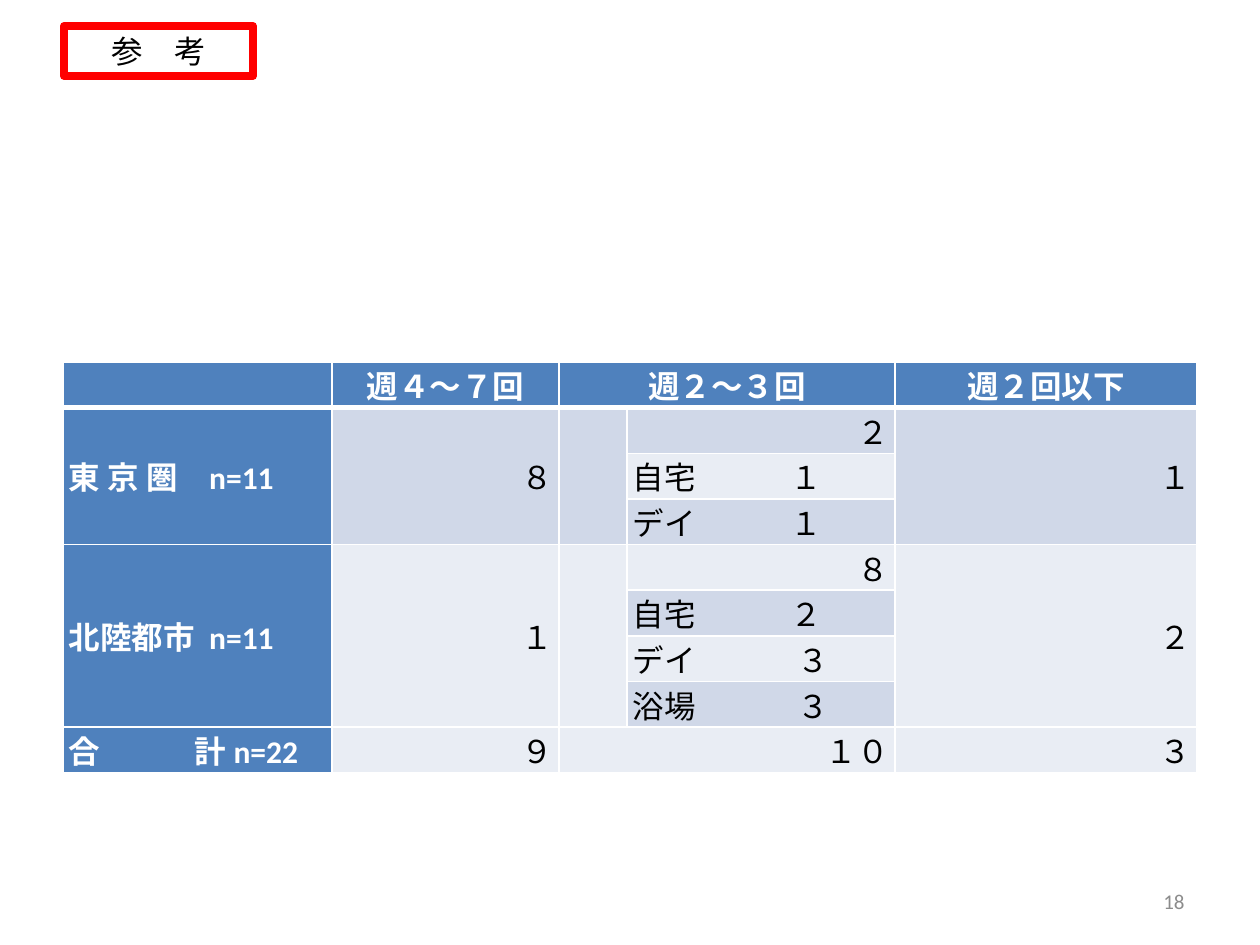
from dataclasses import dataclass

from lxml.etree import SubElement
from pptx import Presentation
from pptx.dml.color import RGBColor
from pptx.enum.lang import MSO_LANGUAGE_ID
from pptx.enum.shapes import MSO_SHAPE
from pptx.enum.text import MSO_ANCHOR, MSO_AUTO_SIZE, PP_ALIGN
from pptx.oxml.ns import qn
from pptx.util import Inches, Pt

PX = Inches(1) // 126


@dataclass(frozen=True)
class Theme:
    latin: str = "Calibri"
    japanese: str = "Noto Sans CJK JP"
    body: int = 18
    small: int = 12
    black: str = "000000"
    white: str = "FFFFFF"
    gray: str = "8C8C8C"
    red: str = "FF0000"
    header: str = "4F81BD"
    bands: tuple = ("E9EDF4", "D0D8E8")
    rule: int = 1
    header_rule: int = 3
    frame: float = 4.5


class SlideBuilder:
    def __init__(self, slide, theme):
        self.slide = slide
        self.theme = theme

    def text(self, text_frame, text, align, color, size=None, bold=False, latin=None):
        paragraph = text_frame.paragraphs[0]
        paragraph.alignment = align
        run = paragraph.add_run()
        run.text = text
        font = run.font
        font.size = Pt(size or self.theme.body)
        font.bold = bold
        font.color.rgb = RGBColor.from_string(color)
        font.name = latin or self.theme.latin
        font.language_id = MSO_LANGUAGE_ID.JAPANESE
        SubElement(run._r.get_or_add_rPr(), qn("a:ea"), typeface=self.theme.japanese)

    def label(self, text, left, top, width, height):
        frame = self.slide.shapes.add_shape(
            MSO_SHAPE.RECTANGLE, left * PX, top * PX, width * PX, height * PX)
        frame.shadow.inherit = False
        frame.fill.background()
        frame.line.color.rgb = RGBColor.from_string(self.theme.red)
        frame.line.width = Pt(self.theme.frame)
        frame.text_frame.vertical_anchor = MSO_ANCHOR.TOP
        frame.text_frame.word_wrap = True
        frame.text_frame.auto_size = MSO_AUTO_SIZE.SHAPE_TO_FIT_TEXT
        self.text(frame.text_frame, text, PP_ALIGN.CENTER, self.theme.black,
                  latin=self.theme.japanese)

    def page_number(self, text, left, top, width, height):
        box = self.slide.shapes.add_textbox(left * PX, top * PX, width * PX, height * PX)
        box.text_frame.word_wrap = True
        box.text_frame.vertical_anchor = MSO_ANCHOR.MIDDLE
        self.text(box.text_frame, text, PP_ALIGN.RIGHT, self.theme.gray, self.theme.small)

    def border(self, cell, row):
        properties = cell._tc.get_or_add_tcPr()
        thick_side = {0: "lnB", 1: "lnT"}.get(row)
        for side in ("lnL", "lnR", "lnT", "lnB"):
            width = self.theme.header_rule if side == thick_side else self.theme.rule
            line = SubElement(properties, qn(f"a:{side}"), w=str(Pt(width)))
            fill = SubElement(line, qn("a:solidFill"))
            SubElement(fill, qn("a:srgbClr"), val=self.theme.white)

    def table(self, rows, spans, left, top, height, column_widths, row_height):
        frame = self.slide.shapes.add_table(
            len(rows), len(column_widths), left * PX, top * PX,
            sum(column_widths) * PX, height * PX)
        table = frame.table
        for column, width in zip(table.columns, column_widths):
            column.width = width * PX
        for row in table.rows:
            row.height = row_height * PX
        frame.height = height * PX
        for r, texts in enumerate(rows):
            for c, text in enumerate(texts):
                self.cell(table.cell(r, c), r, c, text)
        for r, c, height_span, width_span in spans:
            table.cell(r, c).merge(table.cell(r + height_span - 1, c + width_span - 1))

    def cell(self, cell, row, column, text):
        theme = self.theme
        heading = row == 0 or column == 0
        cell.margin_left = cell.margin_right = 6 * PX
        cell.margin_top = cell.margin_bottom = 0
        cell.vertical_anchor = MSO_ANCHOR.MIDDLE
        self.border(cell, row)
        cell.fill.solid()
        cell.fill.fore_color.rgb = RGBColor.from_string(
            theme.header if heading else theme.bands[row % 2])
        if not text:
            return
        if row == 0:
            align = PP_ALIGN.CENTER
        elif column == 0 or "　" in text:
            align = PP_ALIGN.LEFT
        else:
            align = PP_ALIGN.RIGHT
        self.text(cell.text_frame, text, align,
                  theme.white if heading else theme.black, bold=heading)


VISITS = [
    ["", "週４～７回", "週２～３回", "", "週２回以下"],
    ["東 京 圏　n=11", "８", "", "２", "１"],
    ["", "", "", "自宅　　　１", ""],
    ["", "", "", "デイ　　　１", ""],
    ["北陸都市  n=11", "１", "", "８", "２"],
    ["", "", "", "自宅　　　２", ""],
    ["", "", "", "デイ　　　 ３", ""],
    ["", "", "", "浴場　　　 ３", ""],
    ["合　　　計 n=22", "９", "１０", "", "３"],
]
REGIONS = [(1, 3), (4, 4)]


def main():
    presentation = Presentation()
    presentation.slide_width = 1260 * PX
    presentation.slide_height = 945 * PX
    slide = presentation.slides.add_slide(presentation.slide_layouts[6])
    builder = SlideBuilder(slide, Theme())
    spans = [(row, 2, 1, 2) for row in (0, len(VISITS) - 1)]
    spans += [(row, column, count, 1) for row, count in REGIONS for column in (0, 1, 2, 4)]
    builder.table(VISITS, spans, left=63, top=362, height=340,
                  column_widths=[269, 227, 68, 268, 302], row_height=30)
    builder.label("参　考", 64, 26, 189, 50)
    builder.page_number("18", 903, 876, 294, 50)
    presentation.save("out.pptx")


if __name__ == "__main__":
    main()
